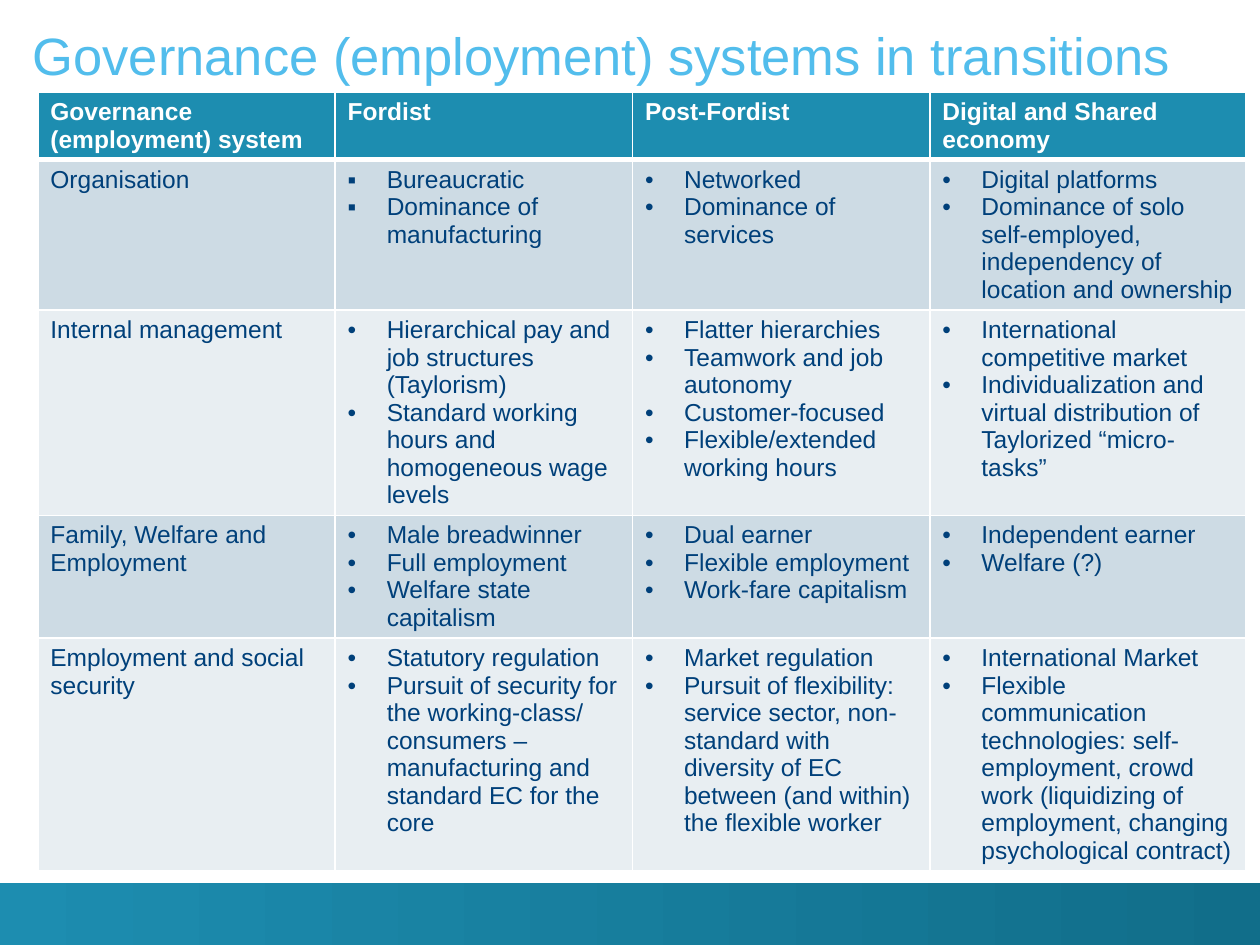
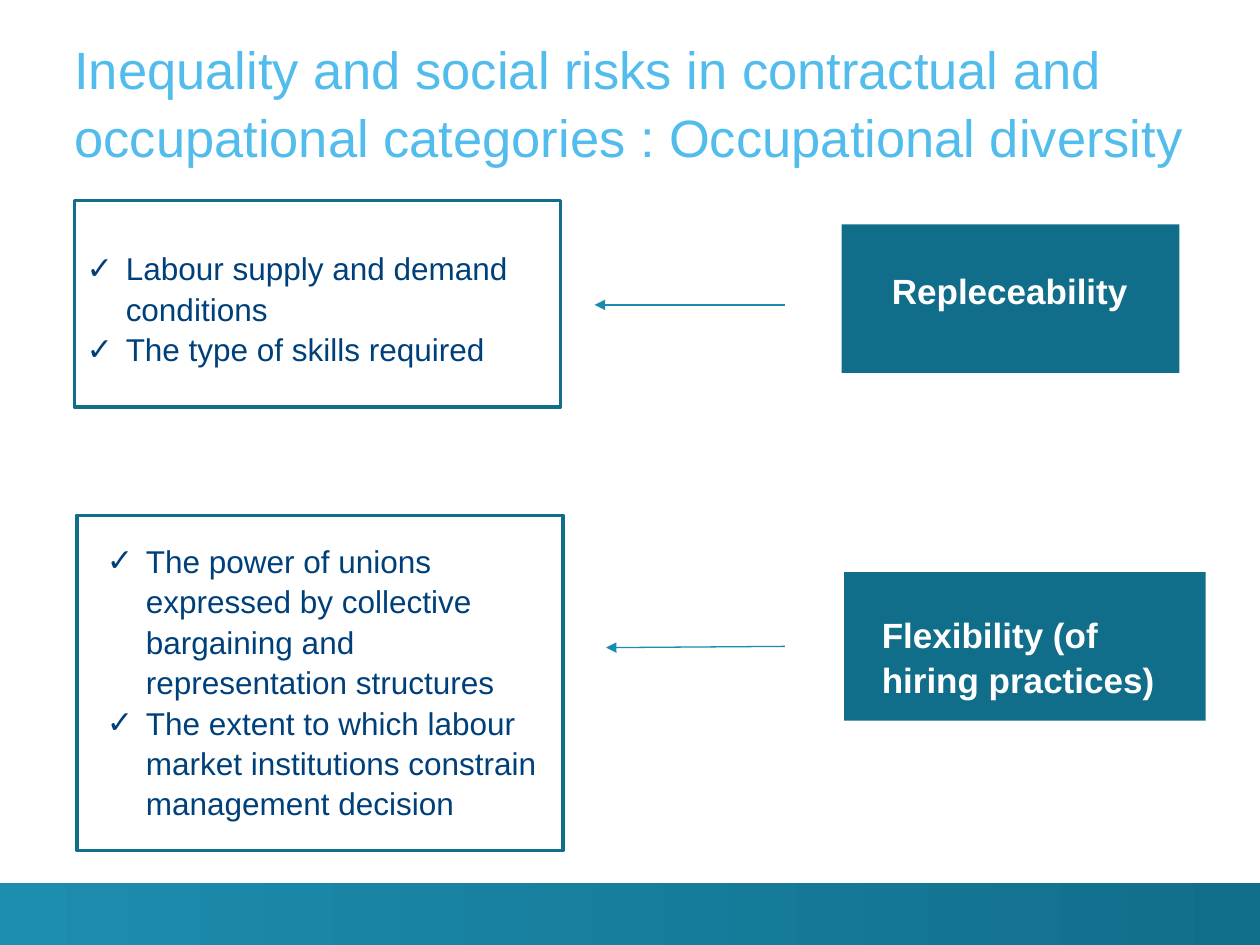
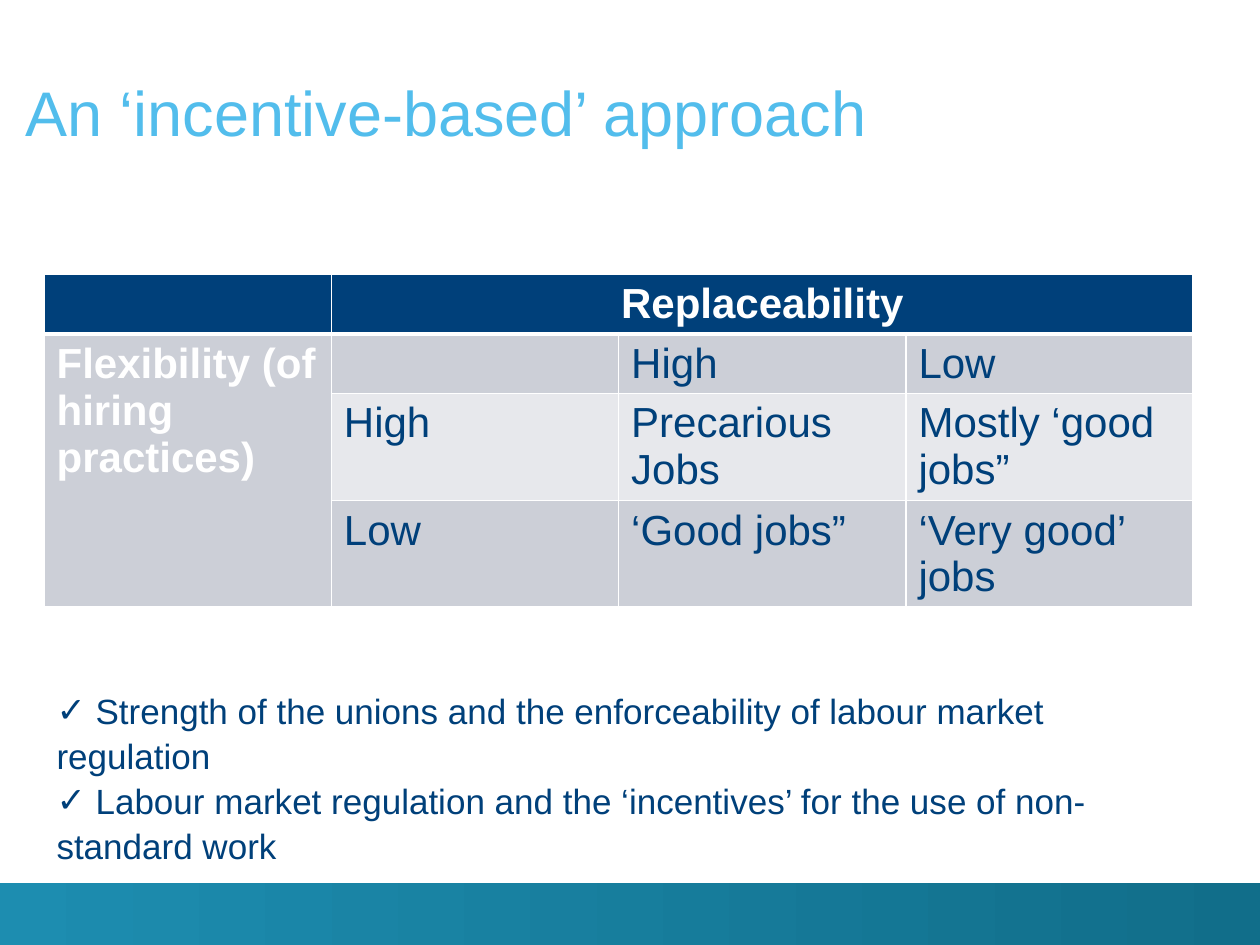
from dataclasses import dataclass

from lxml import etree
from pptx import Presentation
from pptx.dml.color import RGBColor
from pptx.enum.shapes import MSO_CONNECTOR, MSO_SHAPE
from pptx.enum.text import MSO_ANCHOR, MSO_AUTO_SIZE, PP_ALIGN
from pptx.oxml.ns import qn
from pptx.util import Inches, Pt

RECTANGLE = MSO_SHAPE.RECTANGLE
STRAIGHT = MSO_CONNECTOR.STRAIGHT
BOTTOM = MSO_ANCHOR.BOTTOM
FIXED_SIZE = MSO_AUTO_SIZE.NONE
LEFT, CENTER = PP_ALIGN.LEFT, PP_ALIGN.CENTER

FONT = "Arial"
TITLE_ONLY = 5
TEXT_SPACING = 1.07
HANGING = 0.31
COLORS = {
    "white": "FFFFFF",
    "title": "52BDEC",
    "navy": "00407A",
    "teal": "1D8DB0",
    "deep_teal": "116E8A",
    "arrow": "198CB0",
    "blue_band": "CDDBE4",
    "blue_pale": "E8EEF2",
    "grey_band": "CCCFD7",
    "grey_pale": "E7E8EC",
}


@dataclass(frozen=True)
class Area:
    left: float
    top: float
    width: float
    height: float

    def lengths(self) -> tuple:
        return tuple(Inches(n) for n in (self.left, self.top, self.width, self.height))


@dataclass(frozen=True)
class TextStyle:
    size: float
    color: str = "navy"
    bold: bool = False
    bullet: str = ""
    hanging: float = 0
    align: int = LEFT
    spacing: float = 1.0


@dataclass(frozen=True)
class Panel:
    area: Area
    text_area: Area
    lines: tuple
    style: TextStyle
    fill: str
    outline: str = ""


@dataclass(frozen=True)
class Arrow:
    start: tuple
    end: tuple


@dataclass(frozen=True)
class Grid:
    left: float
    top: float
    columns: tuple
    rows: tuple
    header_fill: str
    band_fills: tuple


# Shared drawing functions
def rgb(name: str) -> RGBColor:
    return RGBColor.from_string(COLORS[name])


def write_text(frame, lines, style: TextStyle) -> None:
    frame.text = "\n".join(lines)
    frame.word_wrap = True
    for para in frame.paragraphs:
        para.alignment = style.align
        para.line_spacing = style.spacing
        para.space_before = para.space_after = Pt(0)
        if style.bullet:
            properties = para._p.get_or_add_pPr()
            properties.set("marL", str(Inches(style.hanging)))
            properties.set("indent", str(-Inches(style.hanging)))
            etree.SubElement(properties, qn("a:buFont"), typeface=FONT)
            etree.SubElement(properties, qn("a:buChar"), char=style.bullet)
        for span in para.runs:
            span.font.name = FONT
            span.font.size = Pt(style.size)
            span.font.bold = style.bold
            span.font.color.rgb = rgb(style.color)


def add_rectangle(page, area: Area):
    box = page.shapes.add_shape(RECTANGLE, *area.lengths())
    box.shadow.inherit = False
    box.line.fill.background()
    return box


def add_text(page, area: Area, lines, style: TextStyle) -> None:
    box = page.shapes.add_textbox(*area.lengths())
    write_text(box.text_frame, lines, style)


def add_page(deck, title: str, area: Area, size: float = 30):
    page = deck.slides.add_slide(deck.slide_layouts[TITLE_ONLY])
    band = add_rectangle(page, Area(0, 7.01, 10, 0.49))
    band.fill.gradient()
    band.fill.gradient_angle = 0
    for stop, color in zip(band.fill.gradient_stops, ("teal", "deep_teal")):
        stop.color.rgb = rgb(color)

    heading = page.shapes.title
    heading.left, heading.top, heading.width, heading.height = area.lengths()
    frame = heading.text_frame
    frame.margin_left = frame.margin_right = frame.margin_top = frame.margin_bottom = 0
    frame.vertical_anchor = BOTTOM
    frame.auto_size = FIXED_SIZE
    write_text(frame, [title], TextStyle(size, "title", spacing=TEXT_SPACING))
    return page


def add_panel(page, panel: Panel) -> None:
    box = add_rectangle(page, panel.area)
    box.fill.solid()
    box.fill.fore_color.rgb = rgb(panel.fill)
    if panel.outline:
        box.line.color.rgb = rgb(panel.outline)
        box.line.width = Pt(2)
    add_text(page, panel.text_area, panel.lines, panel.style)


def add_arrow(page, arrow: Arrow) -> None:
    points = [Inches(n) for n in arrow.start + arrow.end]
    connector = page.shapes.add_connector(STRAIGHT, *points)
    connector.line.color.rgb = rgb("arrow")
    connector.line.width = Pt(0.75)
    etree.SubElement(connector.line._get_or_add_ln(), qn("a:tailEnd"), type="triangle")
    etree.SubElement(connector._element.spPr, qn("a:effectLst"))


def set_borders(cell, row: int) -> None:
    heavy_sides = {0: "B", 1: "T"}
    properties = cell._tc.get_or_add_tcPr()
    for place, side in enumerate("LRTB"):
        width = Pt(3 if heavy_sides.get(row) == side else 1)
        border = etree.Element(qn(f"a:ln{side}"), w=str(width))
        fill = etree.SubElement(border, qn("a:solidFill"))
        etree.SubElement(fill, qn("a:srgbClr"), val=COLORS["white"])
        properties.insert(place, border)


def add_grid(page, grid: Grid):
    area = Area(grid.left, grid.top, sum(grid.columns), sum(grid.rows))
    frame = page.shapes.add_table(len(grid.rows), len(grid.columns), *area.lengths())
    table = frame.table
    for column, width in zip(table.columns, grid.columns):
        column.width = Inches(width)
    for index, (row, height) in enumerate(zip(table.rows, grid.rows)):
        row.height = Inches(height)
        color = grid.band_fills[(index - 1) % 2] if index else grid.header_fill
        for cell in row.cells:
            cell.fill.solid()
            cell.fill.fore_color.rgb = rgb(color)
            set_borders(cell, index)
    return table


# Slide 1: comparison of employment systems
SYSTEM_HEADERS = (
    "Governance (employment) system", "Fordist", "Post-Fordist", "Digital and Shared economy",
)
SYSTEM_ROWS = (
    ("Organisation",
     ("Bureaucratic", "Dominance of manufacturing"),
     ("Networked", "Dominance of services"),
     ("Digital platforms",
      "Dominance of solo self-employed, independency of location and ownership")),
    ("Internal management",
     ("Hierarchical pay and job structures (Taylorism)",
      "Standard working hours and homogeneous wage levels"),
     ("Flatter hierarchies", "Teamwork and job autonomy", "Customer-focused",
      "Flexible/extended working hours"),
     ("International competitive market",
      "Individualization and virtual distribution of Taylorized “micro-tasks”")),
    ("Family, Welfare and Employment",
     ("Male breadwinner", "Full employment", "Welfare state capitalism"),
     ("Dual earner", "Flexible employment", "Work-fare capitalism"),
     ("Independent earner", "Welfare (?)")),
    ("Employment and social security",
     ("Statutory regulation",
      "Pursuit of security for the working-class/ consumers – manufacturing and "
      "standard EC for the core"),
     ("Market regulation",
      "Pursuit of flexibility: service sector, non-standard with diversity of EC "
      "between (and within) the flexible worker"),
     ("International Market",
      "Flexible communication technologies: self-employment, crowd work "
      "(liquidizing of employment, changing psychological contract)")),
)


def build_systems(deck) -> None:
    page = add_page(deck, "Governance (employment) systems in transitions",
                    Area(0.26, -0.3, 9.43, 0.98))
    table = add_grid(page, Grid(0.3, 0.73, (2.36, 2.36, 2.36, 2.51),
                                (0.53, 1.19, 1.63, 0.97, 1.85),
                                "teal", ("blue_band", "blue_pale")))
    for column, header in enumerate(SYSTEM_HEADERS):
        write_text(table.cell(0, column).text_frame, [header], TextStyle(14, "white", True))
    for row, (topic, *features) in enumerate(SYSTEM_ROWS, start=1):
        write_text(table.cell(row, 0).text_frame, [topic], TextStyle(14))
        for column, lines in enumerate(features, start=1):
            bullet = "▪" if (row, column) == (1, 1) else "•"
            style = TextStyle(14, bullet=bullet, hanging=HANGING)
            write_text(table.cell(row, column).text_frame, lines, style)


# Slide 2: factors behind each dimension
DIMENSION = TextStyle(20, "white", True, spacing=TEXT_SPACING)
FACTOR = TextStyle(18, bullet="✓", hanging=HANGING, spacing=TEXT_SPACING)
PANELS = (
    Panel(Area(6.68, 1.78, 2.68, 1.18), Area(6.98, 2.07, 2.28, 0.44),
          ("Repleceability",), DIMENSION, "deep_teal"),
    Panel(Area(6.7, 4.54, 2.87, 1.18), Area(6.9, 4.8, 2.59, 0.77),
          ("Flexibility (of hiring practices)",), DIMENSION, "deep_teal"),
    Panel(Area(0.59, 1.59, 3.86, 1.64), Area(0.59, 1.91, 3.86, 1.01),
          ("Labour supply and demand conditions", "The type of skills required"),
          FACTOR, "white", "deep_teal"),
    Panel(Area(0.61, 4.09, 3.86, 2.66), Area(0.75, 4.23, 3.62, 2.52),
          ("The power of unions expressed by collective bargaining and "
           "representation structures",
           "The extent to which labour market institutions constrain management decision"),
          FACTOR, "white", "deep_teal"),
)
ARROWS = (
    Arrow((6.23, 2.42), (4.72, 2.42)),
    Arrow((6.23, 5.13), (4.81, 5.14)),
)


def build_diversity(deck) -> None:
    page = add_page(deck, "Inequality and social risks in contractual and occupational "
                    "categories : Occupational diversity", Area(0.59, 0.33, 9.11, 1))
    for panel in PANELS:
        add_panel(page, panel)
    for arrow in ARROWS:
        add_arrow(page, arrow)


# Slide 3: incentive matrix
JOB_ROWS = (
    ("", "High", "Low"),
    ("High", "Precarious Jobs", "Mostly ‘good jobs”"),
    ("Low", "‘Good jobs”", "‘Very good’ jobs"),
)
INCENTIVES = (
    " Strength of the unions and the enforceability of labour market regulation",
    " Labour market regulation and the ‘incentives’ for the use of non-standard work",
)


def build_incentives(deck) -> None:
    page = add_page(deck, "An ‘incentive-based’ approach", Area(0.2, 0.2, 9.61, 0.98), 36)
    table = add_grid(page, Grid(0.35, 2.18, (2.28,) * 4, (0.46, 0.47, 0.85, 0.84),
                                "navy", ("grey_band", "grey_pale")))
    table.cell(0, 1).merge(table.cell(0, 3))
    table.cell(1, 0).merge(table.cell(3, 0))
    write_text(table.cell(0, 1).text_frame, ["Replaceability"],
               TextStyle(24, "white", True, align=CENTER))
    write_text(table.cell(1, 0).text_frame, ["Flexibility (of hiring practices)"],
               TextStyle(24, "white", True))
    for row, labels in enumerate(JOB_ROWS, start=1):
        for column, label in enumerate(labels, start=1):
            if label:
                write_text(table.cell(row, column).text_frame, [label], TextStyle(24))
    add_text(page, Area(0.35, 5.4, 9.29, 1.45), INCENTIVES,
             TextStyle(20, bullet="✓", spacing=TEXT_SPACING))


def main() -> None:
    deck = Presentation()
    deck.slide_width, deck.slide_height = Inches(10), Inches(7.5)
    build_systems(deck)
    build_diversity(deck)
    build_incentives(deck)
    deck.save("out.pptx")


if __name__ == "__main__":
    main()
